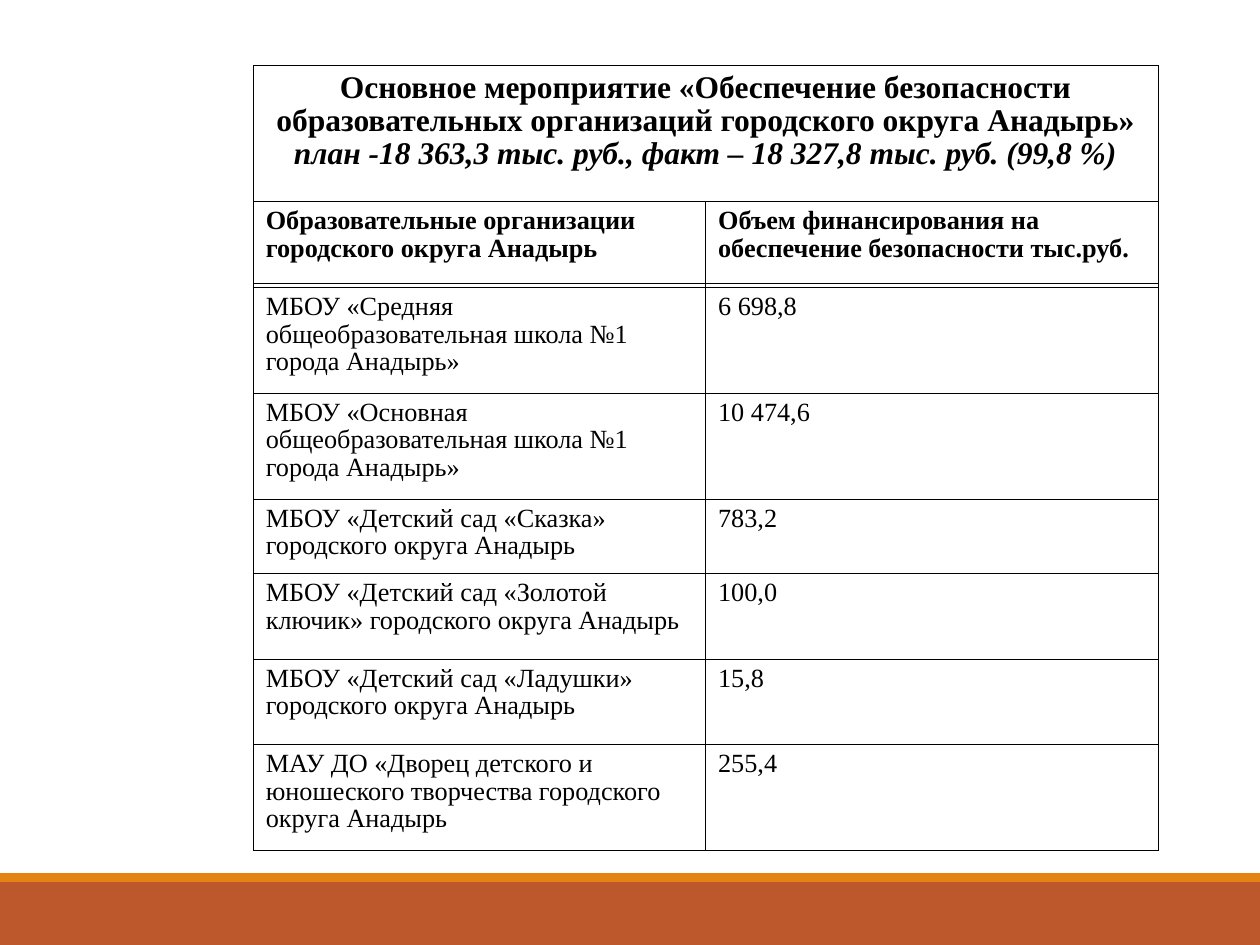
from lxml.etree import SubElement
from pptx import Presentation
from pptx.dml.color import RGBColor
from pptx.enum.shapes import MSO_SHAPE
from pptx.enum.text import PP_ALIGN
from pptx.oxml.ns import qn
from pptx.util import Inches, Pt

BLACK = RGBColor(0x00, 0x00, 0x00)
RUST = RGBColor(0xBD, 0x58, 0x2C)
AMBER = RGBColor(0xE4, 0x83, 0x12)
LEFT, WIDTH = 2.01, 7.18

deck = Presentation()
deck.slide_width, deck.slide_height = Inches(10), Inches(7.5)
slide = deck.slides.add_slide(deck.slide_layouts[6])


def add_grid(top, heights, cols):
    """Add an unfilled table with thin black borders on every cell."""
    frame = slide.shapes.add_table(len(heights), cols, Inches(LEFT), Inches(top),
                                   Inches(WIDTH), Inches(sum(heights)))
    table = frame.table
    table.first_row = table.horz_banding = False
    for row, height in zip(table.rows, heights):
        row.height = Inches(height)
    for cell in table.iter_cells():
        props = cell._tc.get_or_add_tcPr()
        for side in ("a:lnL", "a:lnR", "a:lnT", "a:lnB"):
            line = SubElement(props, qn(side), w=str(Pt(0.25)))
            paint = SubElement(line, qn("a:solidFill"))
            SubElement(paint, qn("a:srgbClr"), val=str(BLACK))
        cell.fill.background()
    return table


def set_font(para, size, bold):
    para.line_spacing = 0.95
    font = para.font
    font.name, font.size, font.bold = "Times New Roman", Pt(size), bold
    font.color.rgb = BLACK


# Bands at the foot of the slide
for top, height, color in ((7, 0.5, RUST), (6.93, 0.07, AMBER)):
    band = slide.shapes.add_shape(MSO_SHAPE.RECTANGLE, 0, Inches(top),
                                  deck.slide_width, Inches(height))
    band.shadow.inherit = False
    band.fill.solid()
    band.fill.fore_color.rgb = color
    band.line.fill.background()

# Funding by school
rows = [
    ("Образовательные организации городского округа Анадырь",
     "Объем финансирования на обеспечение безопасности тыс.руб."),
    ("МБОУ «Средняя общеобразовательная школа №1 города Анадырь»", "6 698,8"),
    ("МБОУ «Основная общеобразовательная школа №1 города Анадырь»", "10 474,6"),
    ("МБОУ «Детский сад «Сказка» городского округа Анадырь", "783,2"),
    ("МБОУ «Детский сад «Золотой ключик» городского округа Анадырь", "100,0"),
    ("МБОУ «Детский сад «Ладушки» городского округа Анадырь", "15,8"),
    ("МАУ ДО «Дворец детского и юношеского творчества городского округа Анадырь",
     "255,4"),
]
funds = add_grid(1.6, [0.68, 0.84, 0.84, 0.59, 0.68, 0.68, 0.84], 2)
for r, texts in enumerate(rows):
    for c, text in enumerate(texts):
        cell = funds.cell(r, c)
        cell.text = text
        set_font(cell.text_frame.paragraphs[0], 15, r == 0)

# Heading box, whose lower edge closes the header row
head = add_grid(0.52, [1.73], 1)
para = head.cell(0, 0).text_frame.paragraphs[0]
para.alignment = PP_ALIGN.CENTER
set_font(para, 18, True)
para.add_run().text = ("Основное мероприятие «Обеспечение безопасности "
                       "образовательных организаций городского округа Анадырь» ")
total = para.add_run()
total.text = "план -18 363,3 тыс. руб., факт – 18 327,8 тыс. руб. (99,8 %)"
total.font.italic = True

deck.save("out.pptx")
